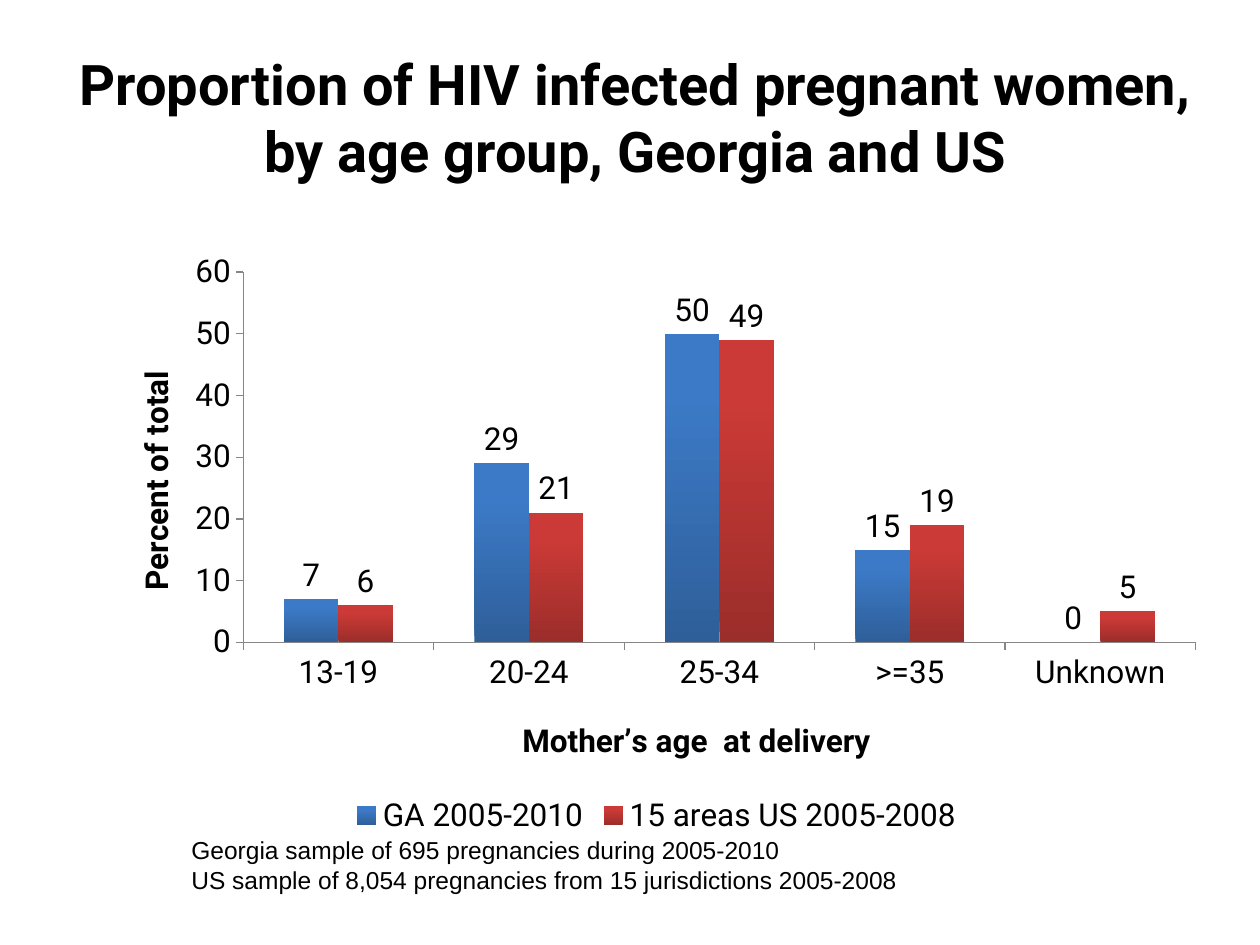
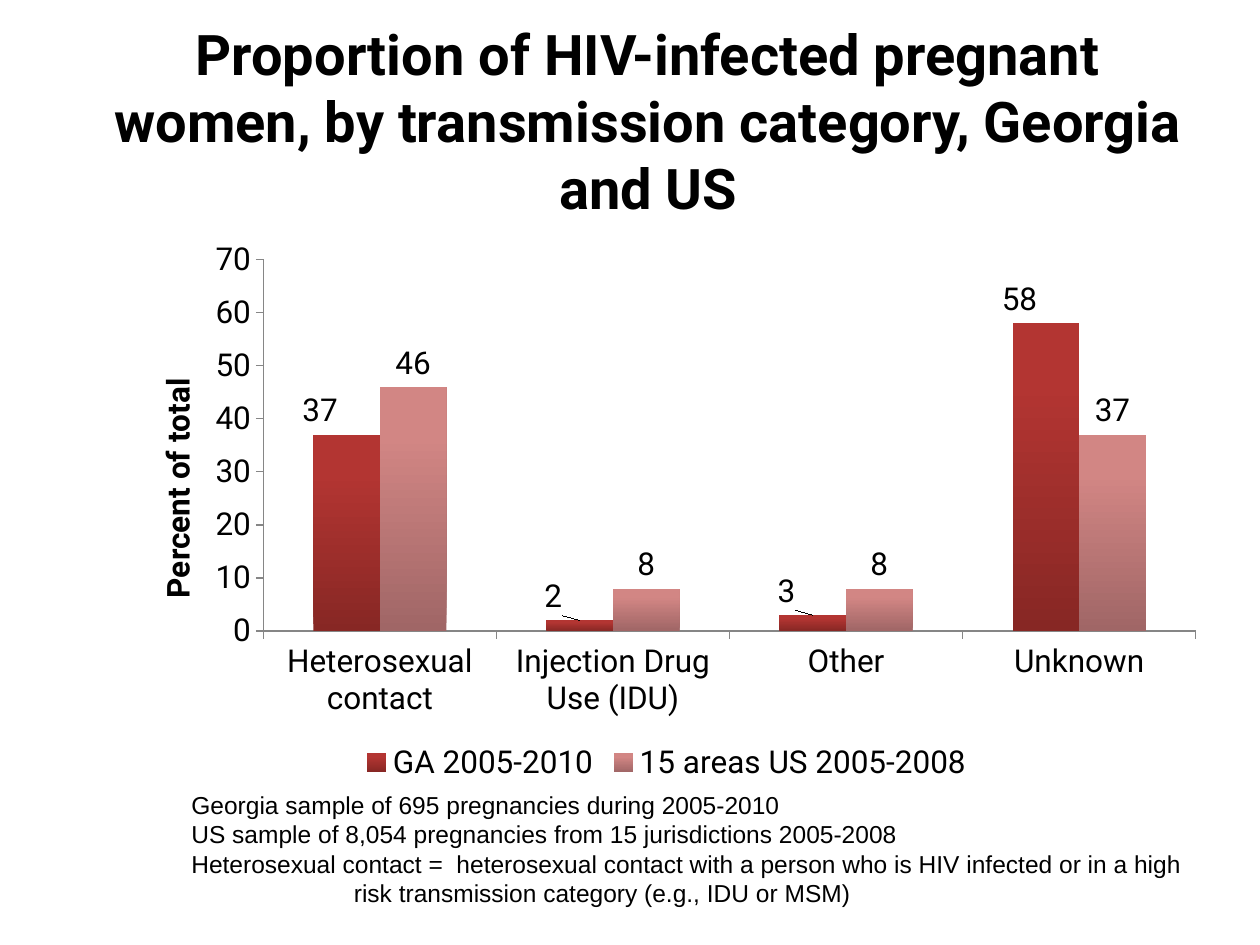
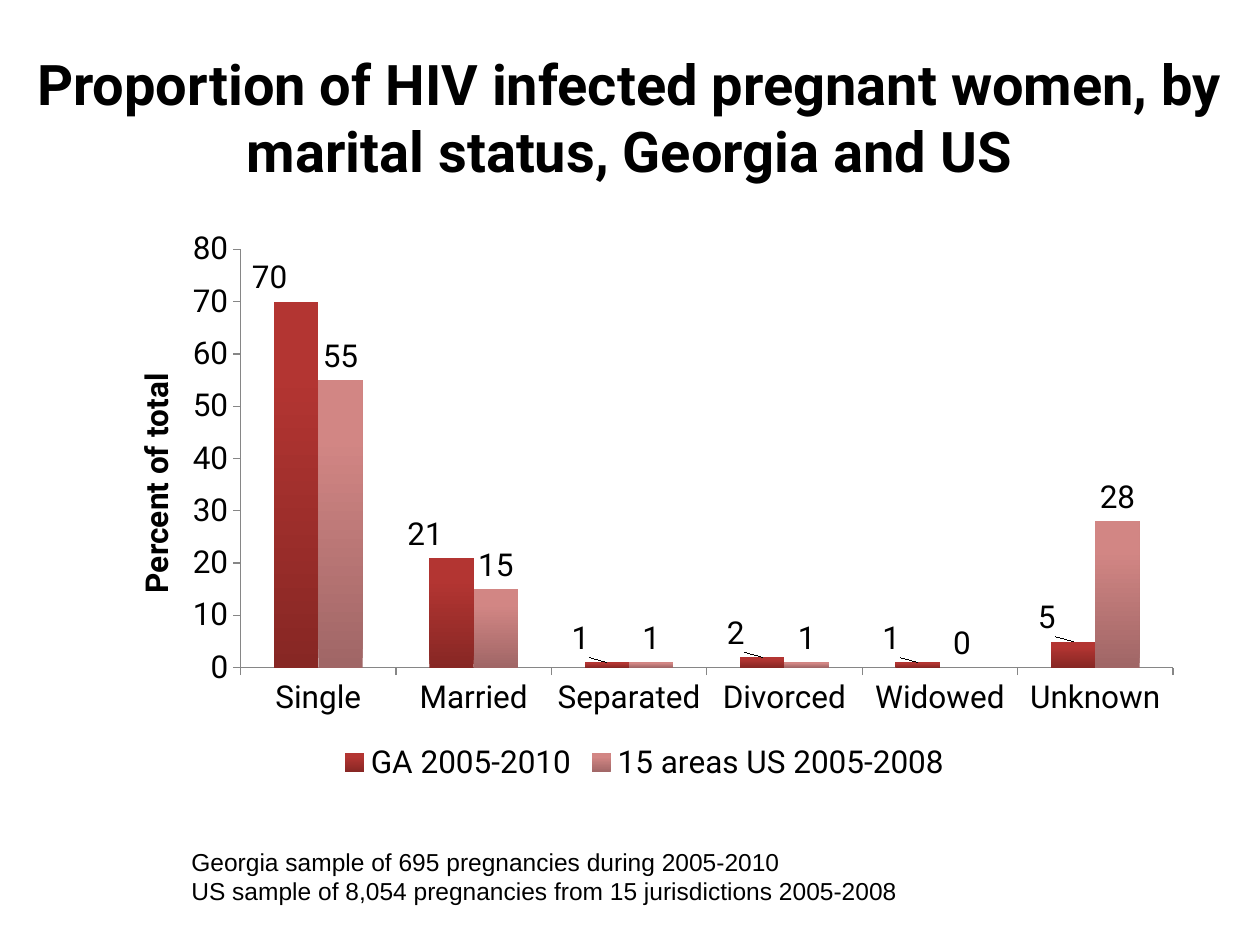
import pptx
import pptx.chart.data
import pptx.dml.color
import pptx.enum.chart
import pptx.enum.text
import pptx.oxml.ns
import pptx.util
from lxml import etree

Inches = pptx.util.Inches
Pt = pptx.util.Pt

BLACK, AXIS_GREY = "000000", "868686"
HEADING_FONT, NOTE_FONT = "Roboto", "Arial"
TITLE_STYLE = {"name": HEADING_FONT, "size": Pt(32), "bold": True}
CHART_STYLE = {"name": HEADING_FONT, "size": Pt(18), "bold": False}
AXIS_TITLE_STYLE = {**CHART_STYLE, "bold": True}
NOTE_STYLE = {"name": NOTE_FONT, "size": Pt(14)}

# Each series runs from a dark foot to a light top.
BLUE, RED = ("2E5F99", "3C7AC7"), ("9B2D2A", "CB3A36")
DEEP_RED, PINK = ("872724", "B33532"), ("A06666", "D28684")

SERIES_NAMES = ["GA 2005-2010", "15 areas US 2005-2008"]
VALUE_TITLE = "Percent of total"
SAMPLE_NOTES = [
    "Georgia sample of 695 pregnancies during 2005-2010",
    "US sample of 8,054 pregnancies from 15 jurisdictions 2005-2008",
]
HANGING_NOTE = (
    "Heterosexual contact =  heterosexual contact with a person who is HIV "
    "infected or in a high risk transmission category (e.g., IDU or MSM)"
)
HANGING_INDENT = Inches(1.29)

# Boxes are left, top, width, height in inches on the slide.
SLIDES = [
    {
        "title": "Proportion of HIV infected pregnant women, by age group, Georgia and US",
        "title_box": (0.42, 0.3, 9.25, 1.25),
        "chart_box": (0.75, 1.92, 8.92, 4.75),
        "plot_box": (1.93, 2.16, 7.56, 2.94),
        "value_title_at": (1.03, 2.9),
        "category_title": "Mother’s age  at delivery",
        "category_title_at": (4.1, 5.67),
        "categories": ["13-19", "20-24", "25-34", ">=35", "Unknown"],
        "values": [(7, 29, 50, 15, 0), (6, 21, 49, 19, 5)],
        "maximum": 60,
        "colours": [BLUE, RED],
        "label_shift": 0,
        "notes": SAMPLE_NOTES,
        "notes_box": (1.42, 6.58, 8.92, 0.57),
    },
    {
        "title": "Proportion of HIV-infected pregnant women, by transmission category, "
                 "Georgia and US",
        "title_box": (0.76, 0.33, 8.77, 1.25),
        "chart_box": (0.92, 1.83, 8.74, 4.42),
        "plot_box": (2.09, 2.06, 7.4, 2.95),
        "value_title_at": (1.2, 2.96),
        "categories": ["Heterosexual contact", "Injection Drug Use (IDU)", "Other", "Unknown"],
        "values": [(37, 2, 3, 58), (46, 8, 8, 37)],
        "maximum": 70,
        "colours": [DEEP_RED, PINK],
        "label_shift": -0.21,
        "notes": SAMPLE_NOTES + [HANGING_NOTE],
        "notes_box": (1.42, 6.22, 8.11, 1.28),
    },
    {
        "title": "Proportion of HIV infected pregnant women, by marital status, Georgia and US",
        "title_box": (0, 0.3, 10, 1.25),
        "chart_box": (0.74, 1.75, 8.75, 4.5),
        "plot_box": (1.91, 1.98, 7.4, 3.32),
        "value_title_at": (1.03, 2.92),
        "categories": ["Single", "Married", "Separated", "Divorced", "Widowed", "Unknown"],
        "values": [(70, 21, 1, 2, 1, 5), (55, 15, 1, 1, 0, 28)],
        "maximum": 80,
        "colours": [DEEP_RED, PINK],
        "label_shift": -0.21,
        "notes": SAMPLE_NOTES,
        "notes_box": (1.42, 6.67, 8.08, 0.57),
    },
]


def rgb(colour):
    return pptx.dml.color.RGBColor.from_string(colour)


def style_font(font, style):
    for name, value in style.items():
        setattr(font, name, value)
    font.color.rgb = rgb(BLACK)


def set_layout(parent, index, settings):
    """Give a chart part a manual layout, inserted at its place in the schema."""
    qn = pptx.oxml.ns.qn
    for old_layout in parent.findall(qn("c:layout")):
        parent.remove(old_layout)
    layout = etree.Element(qn("c:layout"))
    manual = etree.SubElement(layout, qn("c:manualLayout"))
    for name, value in settings.items():
        etree.SubElement(manual, qn("c:" + name)).set("val", str(value))
    parent.insert(index, layout)


def chart_fractions(content, left, top):
    chart_left, chart_top, width, height = content["chart_box"]
    return {
        "xMode": "edge",
        "yMode": "edge",
        "x": round((left - chart_left) / width, 4),
        "y": round((top - chart_top) / height, 4),
    }


def add_title(page, content):
    title = page.shapes.title
    title.left, title.top, title.width, title.height = map(Inches, content["title_box"])
    frame = title.text_frame
    frame.text = content["title"]
    frame.word_wrap = True
    frame.vertical_anchor = pptx.enum.text.MSO_ANCHOR.MIDDLE
    frame.paragraphs[0].alignment = pptx.enum.text.PP_ALIGN.CENTER
    style_font(frame.paragraphs[0].runs[0].font, TITLE_STYLE)


def add_axis_title(axis, text, content, position):
    frame = axis.axis_title.text_frame
    frame.text = text
    style_font(frame.paragraphs[0].runs[0].font, AXIS_TITLE_STYLE)
    set_layout(axis.axis_title._element, 1, chart_fractions(content, *position))


def format_axes(chart, content):
    for axis in (chart.category_axis, chart.value_axis):
        axis.has_major_gridlines = False
        axis.major_tick_mark = pptx.enum.chart.XL_TICK_MARK.OUTSIDE
        axis.minor_tick_mark = pptx.enum.chart.XL_TICK_MARK.NONE
        axis.format.line.color.rgb = rgb(AXIS_GREY)
        axis.format.line.width = Pt(0.75)
        style_font(axis.tick_labels.font, CHART_STYLE)
    scale = {"minimum_scale": 0, "maximum_scale": content["maximum"], "major_unit": 10}
    for name, value in scale.items():
        setattr(chart.value_axis, name, value)
    add_axis_title(chart.value_axis, VALUE_TITLE, content, content["value_title_at"])
    if "category_title" in content:
        add_axis_title(chart.category_axis, content["category_title"], content,
                       content["category_title_at"])


def fill_series(series, colours):
    fill = series.format.fill
    fill.gradient()
    fill.gradient_angle = 90
    for stop, colour, position in zip(fill.gradient_stops, colours, (0, 0.8)):
        stop.color.rgb = rgb(colour)
        stop.position = position
    series.format.line.fill.background()
    series.invert_if_negative = False


def label_series(series):
    labels = series.data_labels
    labels.show_value = True
    labels.position = pptx.enum.chart.XL_LABEL_POSITION.OUTSIDE_END
    style_font(labels.font, CHART_STYLE)


def shift_labels(series, shift):
    """Move every label of a series sideways by a fraction of the chart width."""
    for index in range(len(series.values)):
        label = series.points[index].data_label
        label.position = pptx.enum.chart.XL_LABEL_POSITION.OUTSIDE_END
        style_font(label.font, CHART_STYLE)
    for element in series._element.xpath("c:dLbls/c:dLbl"):
        set_layout(element, 1, {"x": shift, "y": 0})


def add_column_chart(page, content):
    data = pptx.chart.data.CategoryChartData()
    data.categories = content["categories"]
    for name, values in zip(SERIES_NAMES, content["values"]):
        data.add_series(name, values)
    chart = page.shapes.add_chart(
        pptx.enum.chart.XL_CHART_TYPE.COLUMN_CLUSTERED,
        *map(Inches, content["chart_box"]), data).chart
    style_font(chart.font, CHART_STYLE)
    chart.has_title = False
    chart.has_legend = True
    chart.legend.position = pptx.enum.chart.XL_LEGEND_POSITION.BOTTOM
    chart.legend.include_in_layout = False
    style_font(chart.legend.font, CHART_STYLE)
    format_axes(chart, content)

    plot = chart.plots[0]
    for name, value in {"gap_width": 150, "overlap": 0, "vary_by_categories": False}.items():
        setattr(plot, name, value)
    for series, colours in zip(plot.series, content["colours"]):
        fill_series(series, colours)
        label_series(series)
    chart_width, chart_height = content["chart_box"][2:]
    if content["label_shift"]:
        shift_labels(plot.series[0], round(content["label_shift"] / chart_width, 4))

    left, top, width, height = content["plot_box"]
    plot_area = chart._chartSpace.xpath("c:chart/c:plotArea")[0]
    set_layout(plot_area, 0, {
        "layoutTarget": "inner",
        **chart_fractions(content, left, top),
        "w": round(width / chart_width, 4),
        "h": round(height / chart_height, 4),
    })


def add_notes(page, content):
    box = page.shapes.add_textbox(*map(Inches, content["notes_box"]))
    frame = box.text_frame
    frame.word_wrap = True
    for index, note in enumerate(content["notes"]):
        para = frame.paragraphs[0] if index == 0 else frame.add_paragraph()
        if note == HANGING_NOTE:
            properties = para._p.get_or_add_pPr()
            properties.set("marL", str(HANGING_INDENT))
            properties.set("indent", str(-HANGING_INDENT))
        span = para.add_run()
        span.text = note
        style_font(span.font, NOTE_STYLE)


def main():
    deck = pptx.Presentation()
    deck.slide_width, deck.slide_height = Inches(10), Inches(7.5)
    title_only = deck.slide_layouts.get_by_name("Title Only")
    for content in SLIDES:
        page = deck.slides.add_slide(title_only)
        add_title(page, content)
        add_column_chart(page, content)
        add_notes(page, content)
    deck.save("out.pptx")


if __name__ == "__main__":
    main()
